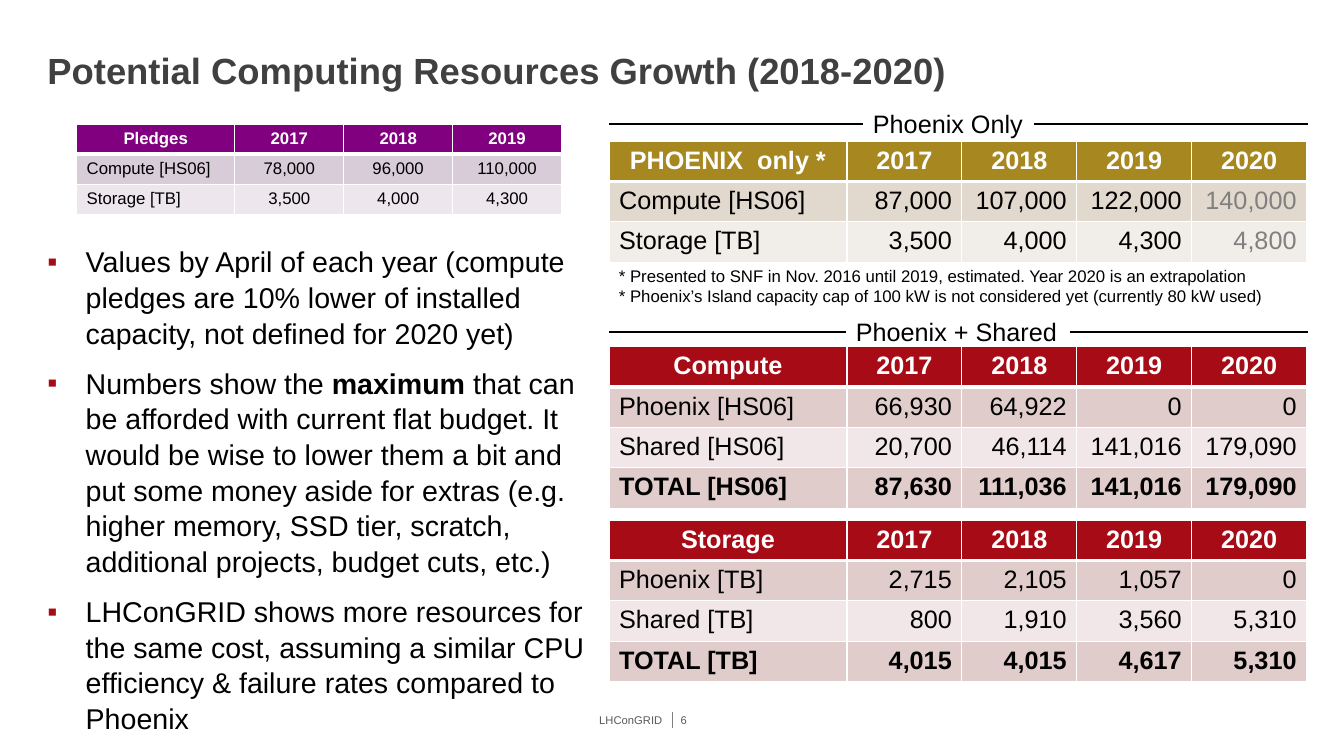
from lxml.etree import SubElement
from pptx import Presentation
from pptx.dml.color import RGBColor
from pptx.enum.shapes import MSO_CONNECTOR
from pptx.enum.text import MSO_ANCHOR, PP_ALIGN
from pptx.oxml.ns import qn
from pptx.util import Inches, Pt

HUES = {
    "black": "000000", "white": "FFFFFF", "title": "404040",
    "grey": "808080", "foot": "595959", "red": "A60B16",
}
GOLD = ("A78720", "E1D9CD", "F1EDE8")
RED = ("A60B16", "E1CCCC", "F1E7E8")
PURPLE = ("800080", "D8CCD8", "EDE7ED")
LEFT, RIGHT = 6.04, 12.97
WIDE = (2.36, 1.14, 1.14, 1.14, 1.14)
SMALL = (1.57, 1.08, 1.08, 1.08)
YEARS = ["2017", "2018", "2019", "2020"]

PLEDGES = [
    ["Pledges", *YEARS[:3]],
    ["Compute [HS06]", "78,000", "96,000", "110,000"],
    ["Storage [TB]", "3,500", "4,000", "4,300"],
]
PHOENIX = [
    ["PHOENIX  only *", *YEARS],
    ["Compute [HS06]", "87,000", "107,000", "122,000", "140,000"],
    ["Storage [TB]", "3,500", "4,000", "4,300", "4,800"],
]
COMPUTE = [
    ["Compute", *YEARS],
    ["Phoenix [HS06]", "66,930", "64,922", "0", "0"],
    ["Shared [HS06]", "20,700", "46,114", "141,016", "179,090"],
    ["TOTAL [HS06]", "87,630", "111,036", "141,016", "179,090"],
]
STORAGE = [
    ["Storage", *YEARS],
    ["Phoenix [TB]", "2,715", "2,105", "1,057", "0"],
    ["Shared [TB]", "800", "1,910", "3,560", "5,310"],
    ["TOTAL [TB]", "4,015", "4,015", "4,617", "5,310"],
]
POINTS = [
    ["Values by April of each year (compute pledges are 10% lower of "
     "installed capacity, not defined for 2020 yet)"],
    ["Numbers show the ", "maximum",
     " that can be afforded with current flat budget. It would be wise to "
     "lower them a bit and put some money aside for extras (e.g. higher "
     "memory, SSD tier, scratch, additional projects, budget cuts, etc.)"],
    ["LHConGRID shows more resources for the same cost, assuming a similar "
     "CPU efficiency & failure rates compared to Phoenix"],
]
NOTES = (
    "* Presented to SNF in Nov. 2016 until 2019, estimated. "
    "Year 2020 is an extrapolation\n"
    "* Phoenix’s Island capacity cap of 100 kW is not considered yet "
    "(currently 80 kW used)"
)


def style(font, size, hue, bold=False):
    """Set the face, size, colour and weight of a font."""
    font.name, font.size, font.bold = "Arial", Pt(size), bold
    font.color.rgb = RGBColor.from_string(hue)


def inset(frame, left, top, right, bottom):
    """Set the inner margins of a text frame in inches."""
    frame.margin_left, frame.margin_top = Inches(left), Inches(top)
    frame.margin_right, frame.margin_bottom = Inches(right), Inches(bottom)


def add_title(slide, text):
    """Place and format the title placeholder."""
    title = slide.shapes.title
    title.left, title.top = Inches(0.47), Inches(0.05)
    title.width, title.height = Inches(12.39), Inches(0.94)
    frame = title.text_frame
    frame.text = text
    frame.vertical_anchor, frame.word_wrap = MSO_ANCHOR.BOTTOM, False
    inset(frame, 0, 0, 0, 0.08)
    frame.paragraphs[0].alignment = PP_ALIGN.LEFT
    style(frame.paragraphs[0].runs[0].font, 26, HUES["title"], True)


def add_text(slide, box, text, size, hue, wrap=True):
    """Add a text box and return its frame."""
    frame = slide.shapes.add_textbox(*map(Inches, box)).text_frame
    frame.word_wrap = wrap
    frame.text = text
    for para in frame.paragraphs:
        for run in para.runs:
            style(run.font, size, hue)
    return frame


def add_line(slide, x1, y1, x2, y2, hue, width):
    """Add a straight line without a shadow."""
    ends = map(Inches, (x1, y1, x2, y2))
    line = slide.shapes.add_connector(MSO_CONNECTOR.STRAIGHT, *ends)
    line.line.color.rgb = RGBColor.from_string(hue)
    line.line.width = Pt(width)
    SubElement(line._element.spPr, qn("a:effectLst"))


def add_head(slide, text, y, start, end):
    """Add a heading with a rule on each side."""
    add_text(slide, (start, y - 0.2, end - start, 0.4), text, 18,
             HUES["black"], False)
    for x1, x2 in ((LEFT, start), (end, RIGHT)):
        add_line(slide, x1, y, x2, y, HUES["black"], 1.5)


def add_edges(cell, base):
    """Draw white borders, with the given width at the base."""
    props = cell._tc.get_or_add_tcPr()
    for side, width in (("L", 1), ("R", 1), ("T", 1), ("B", base)):
        edge = SubElement(props, qn(f"a:ln{side}"), w=str(Pt(width)))
        fill = SubElement(edge, qn("a:solidFill"))
        SubElement(fill, qn("a:srgbClr"), val=HUES["white"])


def add_grid(slide, x, y, widths, height, rows, hues, size, align,
             dim=None):
    """Add a table with a header and banded rows, dimming one column."""
    box = map(Inches, (x, y, sum(widths), height * len(rows)))
    grid = slide.shapes.add_table(len(rows), len(widths), *box).table
    for col, width in zip(grid.columns, widths):
        col.width = Inches(width)
    for r, row in enumerate(rows):
        grid.rows[r].height = Inches(height)
        head = r == 0
        bold = head or row[0].startswith("TOTAL")
        band = hues[0] if head else hues[2 - r % 2]
        for c, text in enumerate(row):
            cell = grid.cell(r, c)
            add_edges(cell, 3 if head else 1)
            cell.fill.solid()
            cell.fill.fore_color.rgb = RGBColor.from_string(band)
            cell.text_frame.text = text
            para = cell.text_frame.paragraphs[0]
            if head:
                para.alignment = PP_ALIGN.CENTER
            else:
                para.alignment = align if c else PP_ALIGN.LEFT
            ink = "white" if head else "grey" if c == dim else "black"
            style(para.runs[0].font, size, HUES[ink], bold)


def add_points(slide):
    """Add the bulleted remarks."""
    frame = add_text(slide, (0.47, 2.35, 5.41, 4.48), "", 20.4,
                     HUES["black"])
    inset(frame, 0, 0.06, 0, 0.05)
    for i, parts in enumerate(POINTS):
        para = frame.add_paragraph() if i else frame.paragraphs[0]
        props = para._p.get_or_add_pPr()
        props.set("marL", str(Inches(0.38)))
        props.set("indent", str(-Inches(0.38)))
        tint = SubElement(props, qn("a:buClr"))
        SubElement(tint, qn("a:srgbClr"), val=HUES["red"])
        SubElement(props, qn("a:buFont"), typeface="Arial")
        SubElement(props, qn("a:buChar"), char="▪")
        para.line_spacing = 1.04
        para.space_before, para.space_after = Pt(4.4 if i else 0), Pt(6)
        for part in parts:
            run = para.add_run()
            run.text = part
            style(run.font, 20.4, HUES["black"], part == "maximum")


def add_foot(slide):
    """Add the footer name, divider and page number."""
    name = add_text(slide, (2.15, 7.06, 4.5, 0.16), "LHConGRID", 8,
                    HUES["foot"])
    inset(name, 0, 0, 0.08, 0)
    name.paragraphs[0].alignment = PP_ALIGN.RIGHT
    page = add_text(slide, (6.67, 7.06, 0.42, 0.16), "6", 8, HUES["foot"])
    inset(page, 0.08, 0, 0, 0)
    name.vertical_anchor = page.vertical_anchor = MSO_ANCHOR.MIDDLE
    add_line(slide, 6.67, 7.06, 6.67, 7.22, HUES["grey"], 0.75)


def main():
    """Build and save the slide."""
    deck = Presentation()
    deck.slide_width, deck.slide_height = Inches(13.33), Inches(7.5)
    slide = deck.slides.add_slide(deck.slide_layouts[5])
    add_title(slide, "Potential Computing Resources Growth (2018-2020)")
    add_points(slide)
    add_grid(slide, 0.76, 1.23, SMALL, 0.3, PLEDGES, PURPLE, 12,
             PP_ALIGN.CENTER)
    add_grid(slide, LEFT, 1.4, WIDE, 0.38, PHOENIX, GOLD, 18,
             PP_ALIGN.RIGHT, 4)
    for y, rows in ((3.44, COMPUTE), (5.16, STORAGE)):
        add_grid(slide, LEFT, y, WIDE, 0.38, rows, RED, 18, PP_ALIGN.RIGHT)
    add_text(slide, (LEFT, 2.59, 6.93, 0.5), NOTES, 12, HUES["black"])
    add_head(slide, "Phoenix Only", 1.23, 8.56, 10.26)
    add_head(slide, "Phoenix + Shared", 3.29, 8.39, 10.61)
    add_foot(slide)
    deck.save("out.pptx")


if __name__ == "__main__":
    main()
